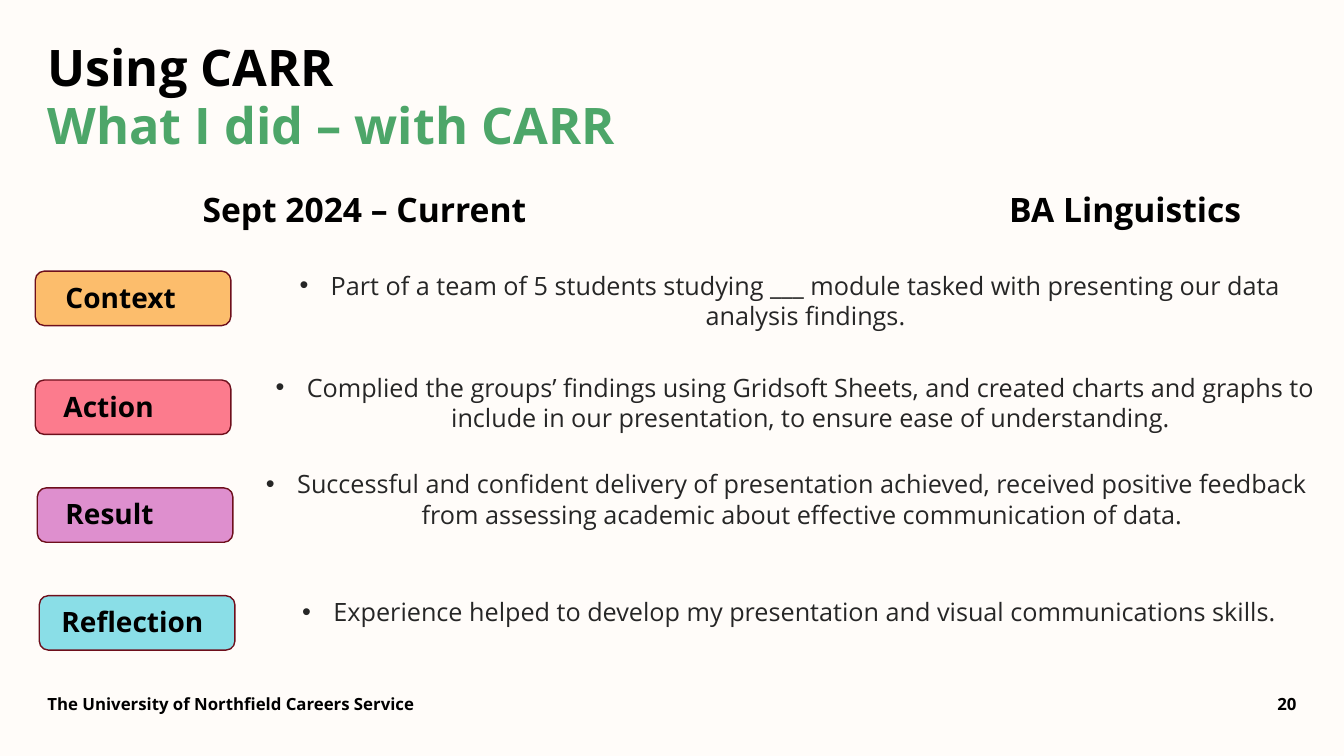
from dataclasses import dataclass

import pptx
import pptx.dml.color
import pptx.enum.shapes
import pptx.enum.text
import pptx.oxml
import pptx.oxml.ns
import pptx.util
from pptx.util import Inches

ALIGN = pptx.enum.text.PP_ALIGN
ANCHOR = pptx.enum.text.MSO_ANCHOR
FONT = "Open Sans"
BLACK, GREEN, GREY, MAROON = "000000", "4DA669", "262626", "6E0F1C"
BACKGROUND = "FFFCF9"
COMPARISON_LAYOUT = 4
TAG_SIZE = (1.94, 0.54)
FRAME_FORMAT = {
    "word_wrap": True,
    "auto_size": pptx.enum.text.MSO_AUTO_SIZE.NONE,
    "margin_left": 0,
    "margin_top": 0,
    "margin_right": 0,
    "margin_bottom": 0,
}


@dataclass
class Step:
    """One CARR step: its coloured tag, its label and its bullet."""
    label: str
    fill: str
    tag_at: tuple[float, float]
    label_left: float
    label_width: float
    bullet: str
    bullet_box: tuple[float, float, float, float]


STEPS = [
    Step("Context", "FCBD6C", (0.35, 2.69), 0.65, 1.37,
         "Part of a team of 5 students studying ___ module tasked with "
         "presenting our data analysis findings.",
         (2.63, 2.68, 10.41, 0.61)),
    Step("Action", "FC7B8D", (0.35, 3.77), 0.63, 1.37,
         "Complied the groups’ findings using Gridsoft Sheets, and created "
         "charts and graphs to include in our presentation, to ensure ease of "
         "understanding.",
         (2.73, 3.69, 10.31, 0.61)),
    Step("Result", "DE8FCE", (0.37, 4.84), 0.65, 1.37,
         "Successful and confident delivery of presentation achieved, received "
         "positive feedback from assessing academic about effective "
         "communication of data.",
         (2.62, 4.65, 10.36, 0.61)),
    Step("Reflection", "8ADEE7", (0.39, 5.91), 0.61, 1.41,
         "Experience helped to develop my presentation and visual "
         "communications skills. ",
         (2.68, 5.92, 10.36, 0.3)),
]


def rgb(value: str) -> pptx.dml.color.RGBColor:
    return pptx.dml.color.RGBColor.from_string(value)


def apply_format(target, values: dict) -> None:
    for name, value in values.items():
        setattr(target, name, value)


def place(shape, box: tuple) -> None:
    sides = ("left", "top", "width", "height")
    apply_format(shape, dict(zip(sides, map(Inches, box))))


def add_run(paragraph, text: str, size: float, color: str = BLACK,
            bold: bool = True) -> None:
    run = paragraph.add_run()
    run.text = text
    apply_format(run.font, {"name": FONT, "size": pptx.util.Pt(size), "bold": bold})
    run.font.color.rgb = rgb(color)


def prepare(shape, align=ALIGN.LEFT, anchor=ANCHOR.TOP, spacing=1.0):
    """Set the frame without margins and return its first paragraph."""
    apply_format(shape.text_frame, FRAME_FORMAT | {"vertical_anchor": anchor})
    paragraph = shape.text_frame.paragraphs[0]
    apply_format(paragraph, {"alignment": align, "line_spacing": spacing,
                             "space_before": 0, "space_after": 0})
    return paragraph


def add_text(slide, text: str, box: tuple, size: float, align=ALIGN.LEFT,
             anchor=ANCHOR.TOP):
    paragraph = prepare(slide.shapes.add_textbox(*map(Inches, box)), align, anchor)
    add_run(paragraph, text, size)
    return paragraph


def append_property(paragraph, xml: str) -> None:
    """Append one DrawingML element to the paragraph properties."""
    tag, rest = xml.split(" ", 1)
    namespace = pptx.oxml.ns.nsdecls("a")
    properties = paragraph._p.get_or_add_pPr()
    properties.append(pptx.oxml.parse_xml(f"<a:{tag} {namespace} {rest}"))


def add_title(slide) -> None:
    title = slide.shapes.title
    place(title, (0.47, 0.37, 9.25, 1.25))
    paragraph = prepare(title, spacing=pptx.util.Pt(42))
    add_run(paragraph, "Using CARR", 36)
    paragraph.add_line_break()
    add_run(paragraph, "What I did – with CARR", 36, GREEN)


def add_heading(slide) -> None:
    heading = add_text(slide, "Sept 2024 – Current\tBA Linguistics",
                       (2.01, 1.87, 10.56, 0.4), 24)
    append_property(heading, f'tabLst ><a:tab pos="{Inches(8)}" algn="l"/></a:tabLst>')


def add_tag(slide, step: Step) -> None:
    tag = slide.shapes.add_shape(
        pptx.enum.shapes.MSO_SHAPE.ROUNDED_RECTANGLE,
        *map(Inches, step.tag_at + TAG_SIZE))
    tag.shadow.inherit = False
    tag.fill.solid()
    tag.fill.fore_color.rgb = rgb(step.fill)
    tag.line.color.rgb = rgb(MAROON)
    tag.line.width = pptx.util.Pt(1)
    label_top = step.tag_at[1] + 0.09
    add_text(slide, step.label, (step.label_left, label_top, step.label_width, 0.34), 20)


def fill_bullet(body, step: Step) -> None:
    place(body, step.bullet_box)
    paragraph = prepare(body, ALIGN.CENTER)
    properties = paragraph._p.get_or_add_pPr()
    properties.set("marL", str(Inches(0.31)))
    properties.set("indent", str(Inches(-0.31)))
    append_property(paragraph, 'buFont typeface="Arial"/>')
    append_property(paragraph, 'buChar char="•"/>')
    add_run(paragraph, step.bullet, 18, GREY, bold=False)


def main() -> None:
    deck = pptx.Presentation()
    apply_format(deck, {"slide_width": Inches(13.33), "slide_height": Inches(7.5)})
    slide = deck.slides.add_slide(deck.slide_layouts[COMPARISON_LAYOUT])
    slide.background.fill.solid()
    slide.background.fill.fore_color.rgb = rgb(BACKGROUND)

    add_title(slide)
    add_heading(slide)
    bodies = [holder for holder in slide.placeholders
              if holder.placeholder_format.idx in range(1, 5)]
    for body, step in zip(bodies, STEPS):
        add_tag(slide, step)
        fill_bullet(body, step)
    add_text(slide, "The University of Northfield Careers Service",
             (0.47, 6.69, 9.25, 0.39), 12, anchor=ANCHOR.BOTTOM)
    add_text(slide, "20", (11.68, 6.69, 1.18, 0.39), 12, ALIGN.RIGHT, ANCHOR.BOTTOM)

    deck.save("out.pptx")


if __name__ == "__main__":
    main()
